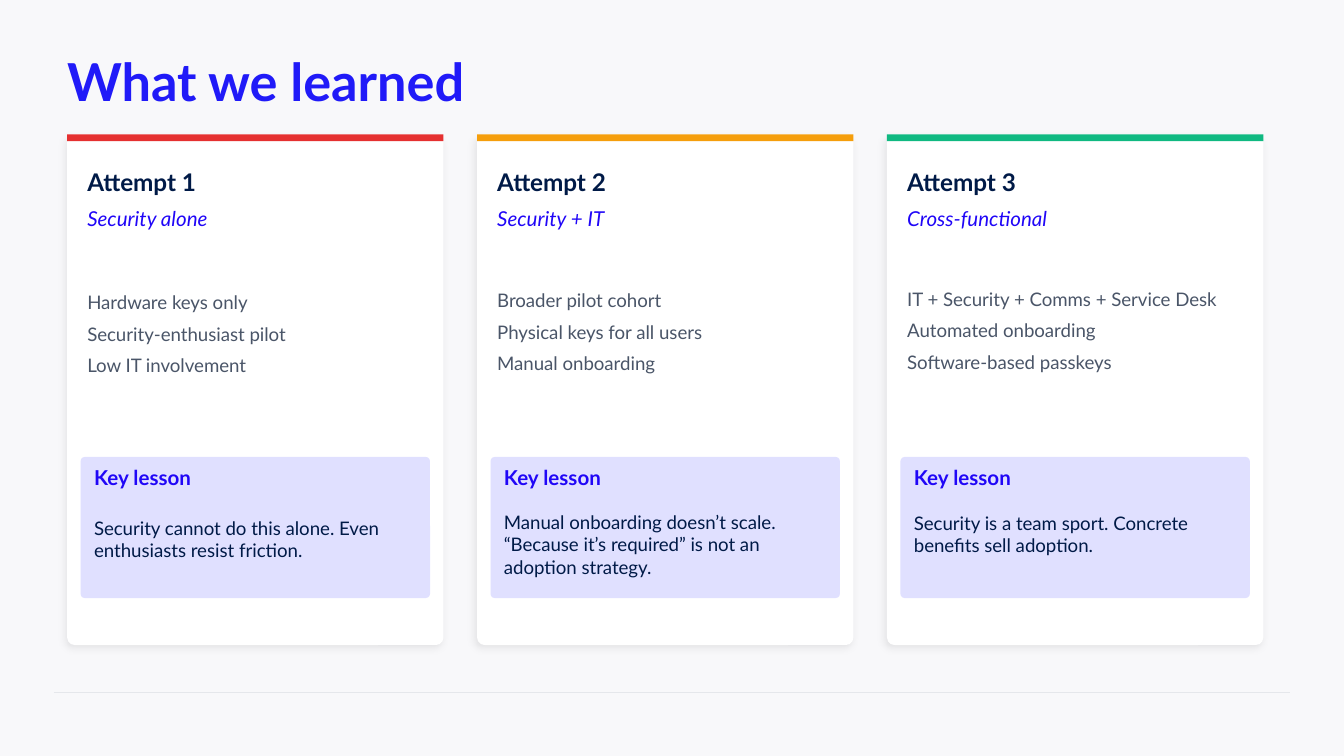
import dataclasses

import lxml.etree
import pptx
import pptx.dml.color
import pptx.enum.shapes
import pptx.enum.text
import pptx.oxml.ns
import pptx.util


@dataclasses.dataclass(frozen=True)
class Theme:
    font: str = "Lato"
    background: str = "F8F8FA"
    title: str = "201AF8"
    accent: str = "2006F7"
    heading: str = "001A47"
    body: str = "4A5568"
    card: str = "FFFFFF"
    lesson: str = "8584FF"
    rule: str = "E5E7EB"
    title_size: int = 28
    heading_size: int = 13
    label_size: int = 11
    body_size: int = 10


theme = Theme()
qn = pptx.oxml.ns.qn
color = pptx.dml.color.RGBColor.from_string
kinds = pptx.enum.shapes.MSO_SHAPE

deck = pptx.Presentation()
deck.slide_width = pptx.util.Inches(10)
deck.slide_height = deck.slide_width * 9 // 16
cell = deck.slide_width // 200
page = deck.slides.add_slide(deck.slide_layouts[6])
page.background.fill.solid()
page.background.fill.fore_color.rgb = color(theme.background)


def add_text(text, *, area, size, ink, bold=False, italic=False, spacing=None):
    box = page.shapes.add_textbox(*[round(cells * cell) for cells in area])
    frame = box.text_frame
    frame.word_wrap = True
    frame.vertical_anchor = pptx.enum.text.MSO_ANCHOR.MIDDLE
    frame.margin_left = frame.margin_right = 0
    frame.margin_top = frame.margin_bottom = 0
    frame.text = text
    for para in frame.paragraphs:
        if spacing:
            para.line_spacing = spacing
        for span in para.runs:
            span.font.name = theme.font
            span.font.size = pptx.util.Pt(size)
            span.font.color.rgb = color(ink)
            span.font.bold = bold
            span.font.italic = italic


def add_panel(kind, *, area, fill, corner=None):
    panel = page.shapes.add_shape(kind, *[round(cells * cell) for cells in area])
    panel.shadow.inherit = False
    panel.fill.solid()
    panel.fill.fore_color.rgb = color(fill)
    panel.line.fill.background()
    if corner is not None:
        panel.adjustments[0] = corner
    return panel


add_text("What we learned", area=(10, 6, 180, 12), size=theme.title_size, ink=theme.title, bold=True)

attempts = [
    dict(
        stripe="E53030",
        approach="Security alone",
        points="Hardware keys only\nSecurity-enthusiast pilot\nLow IT involvement",
        points_row=37,
        points_columns=50,
        lesson="Security cannot do this alone. Even enthusiasts resist friction.",
        lesson_row=74.8,
        lesson_rows=10.8,
    ),
    dict(
        stripe="F59E0B",
        approach="Security + IT",
        points="Broader pilot cohort\nPhysical keys for all users\nManual onboarding",
        points_row=36.7,
        points_columns=50,
        lesson="Manual onboarding doesn’t scale. “Because it’s required” is not an adoption strategy.",
        lesson_row=74.8,
        lesson_rows=12.4,
    ),
    dict(
        stripe="10B981",
        approach="Cross-functional",
        points="IT + Security + Comms + Service Desk\nAutomated onboarding\nSoftware-based passkeys",
        points_row=36.5,
        points_columns=53,
        lesson="Security is a team sport. Concrete benefits sell adoption.",
        lesson_row=74.1,
        lesson_rows=10.8,
    ),
]

for number, attempt in enumerate(attempts, start=1):
    left = 10 + 61 * (number - 1)

    card = add_panel(kinds.ROUNDED_RECTANGLE, area=(left, 20, 56, 76), fill=theme.card, corner=0.02)
    effects = card._element.spPr.find(qn("a:effectLst"))
    shadow = lxml.etree.SubElement(
        effects,
        qn("a:outerShdw"),
        blurRad=str(pptx.util.Pt(4)),
        dist=str(pptx.util.Pt(2)),
        dir=str(135 * 60000),
        algn="bl",
        rotWithShape="0",
    )
    shade = lxml.etree.SubElement(shadow, qn("a:srgbClr"), val="000000")
    lxml.etree.SubElement(shade, qn("a:alpha"), val="8000")

    add_panel(kinds.RECTANGLE, area=(left, 20, 56, 1), fill=attempt["stripe"])
    add_text(f"Attempt {number}", area=(left + 3, 24, 50, 6),
             size=theme.heading_size, ink=theme.heading, bold=True)
    add_text(attempt["approach"], area=(left + 3, 30, 50, 5),
             size=theme.label_size, ink=theme.accent, italic=True)
    add_text(attempt["points"], area=(left + 3, attempt["points_row"], attempt["points_columns"], 24),
             size=theme.body_size, ink=theme.body, spacing=1.4)

    lesson = add_panel(kinds.ROUNDED_RECTANGLE, area=(left + 2, 68, 52, 21), fill=theme.lesson, corner=0.03)
    tint = lesson._element.spPr.find(qn("a:solidFill")).find(qn("a:srgbClr"))
    lxml.etree.SubElement(tint, qn("a:alpha"), val="25000")
    add_text("Key lesson", area=(left + 4, 69, 48, 4),
             size=theme.label_size, ink=theme.accent, bold=True)
    add_text(attempt["lesson"], area=(left + 4, attempt["lesson_row"], 48, attempt["lesson_rows"]),
             size=theme.body_size, ink=theme.heading)

footer_rule = page.shapes.add_connector(
    pptx.enum.shapes.MSO_CONNECTOR.STRAIGHT, 8 * cell, 103 * cell, 192 * cell, 103 * cell
)
footer_rule.line.color.rgb = color(theme.rule)
footer_rule.line.width = pptx.util.Pt(0.5)
lxml.etree.SubElement(footer_rule._element.spPr, qn("a:effectLst"))

deck.save("out.pptx")
